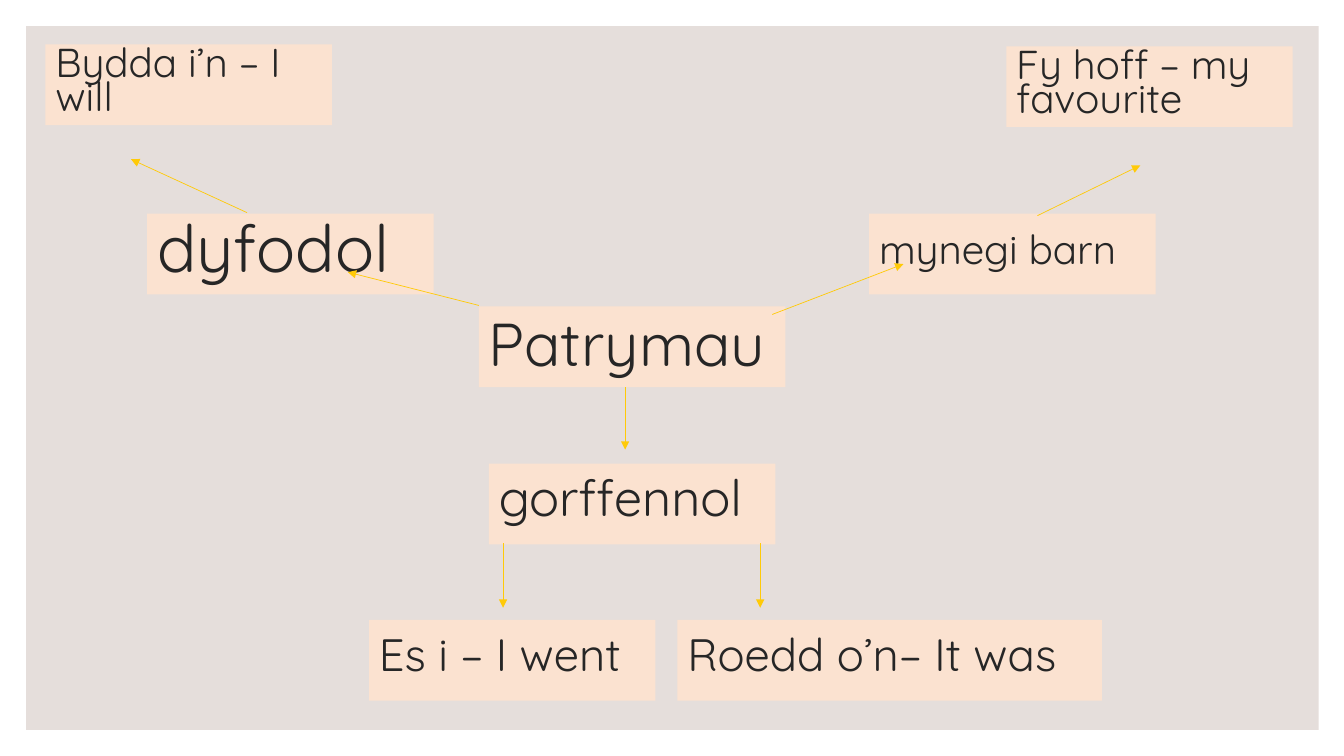
import pptx
import pptx.util
import pptx.dml.color
import pptx.enum.shapes
import pptx.enum.text
import pptx.oxml
import pptx.oxml.ns

HUES = {"panel": "E5DEDB", "box": "FBE2D0", "text": "262626", "line": "FFCA08"}
FONT = "Quicksand"

deck = pptx.Presentation()
deck.slide_width = pptx.util.Inches(13.33)
deck.slide_height = pptx.util.Inches(7.5)
slide = deck.slides.add_slide(deck.slide_layouts[6])


def place(x, y):
    """Turn percent shares of the slide into lengths."""
    return int(deck.slide_width * x / 100), int(deck.slide_height * y / 100)


def block(x, y, wide, high, hue):
    shape = slide.shapes.add_shape(
        pptx.enum.shapes.MSO_SHAPE.RECTANGLE, *place(x, y), *place(wide, high))
    shape.shadow.inherit = False
    shape.fill.solid()
    shape.fill.fore_color.rgb = pptx.dml.color.RGBColor.from_string(HUES[hue])
    shape.line.fill.background()
    return shape


# Background panel
block(1.95, 3.47, 96.17, 93.07, "panel")

# Word boxes: text, left, top, width, font size, line spacing
HIGH = 10.67
WIDE = 21.31
UPPER = 28.27
LOWER = 82
boxes = [
    ("Patrymau", 35.63, 40.53, 22.81, 43.2, 0.9),
    ("mynegi barn", 64.67, UPPER, WIDE, 28.8, 0.7),
    ("dyfodol", 10.95, UPPER, WIDE, 46.8, 0.8),
    ("gorffennol", 36.38, 61.33, WIDE, 36, 0.7),
    ("Es i – I went", 27.46, LOWER, WIDE, 32.4, 0.7),
    ("Fy hoff – my favourite", 74.87, 6.13, WIDE, 28.8, 0.7),
    ("Bydda i’n – I will", 3.38, 5.87, WIDE, 28.8, 0.7),
    ("Roedd o’n– It was", 50.41, LOWER, 31.58, 32.4, 0.7),
]
for words, x, y, wide, size, gap in boxes:
    frame = block(x, y, wide, HIGH, "box").text_frame
    frame.word_wrap = True
    frame.vertical_anchor = pptx.enum.text.MSO_ANCHOR.MIDDLE
    para = frame.paragraphs[0]
    para.text = words
    para.alignment = pptx.enum.text.PP_ALIGN.LEFT
    para.line_spacing = gap
    para.font.name = FONT
    para.font.size = pptx.util.Pt(size)
    para.font.color.rgb = pptx.dml.color.RGBColor.from_string(HUES["text"])

# Arrows: start and end points
arrows = [
    ((57.46, 41.6), (67.22, 34.93)),
    ((77.19, 28.53), (84.85, 21.87)),
    ((35.63, 40.4), (25.88, 36)),
    ((18.38, 28.13), (9.75, 21.07)),
    ((46.51, 51.2), (46.51, 59.47)),
    ((37.43, 71.87), (37.43, 80.4)),
    ((56.56, 71.87), (56.56, 80.4)),
]
for start, end in arrows:
    arrow = slide.shapes.add_connector(
        pptx.enum.shapes.MSO_CONNECTOR.STRAIGHT, *place(*start), *place(*end))
    arrow.line.width = pptx.util.Pt(0.5)
    arrow.line.color.rgb = pptx.dml.color.RGBColor.from_string(HUES["line"])
    head = pptx.oxml.parse_xml(
        '<a:tailEnd %s type="triangle"/>' % pptx.oxml.ns.nsdecls("a"))
    arrow.line._get_or_add_ln().append(head)
    arrow._element.spPr.append(pptx.oxml.parse_xml(
        "<a:effectLst %s/>" % pptx.oxml.ns.nsdecls("a")))

deck.save("out.pptx")
